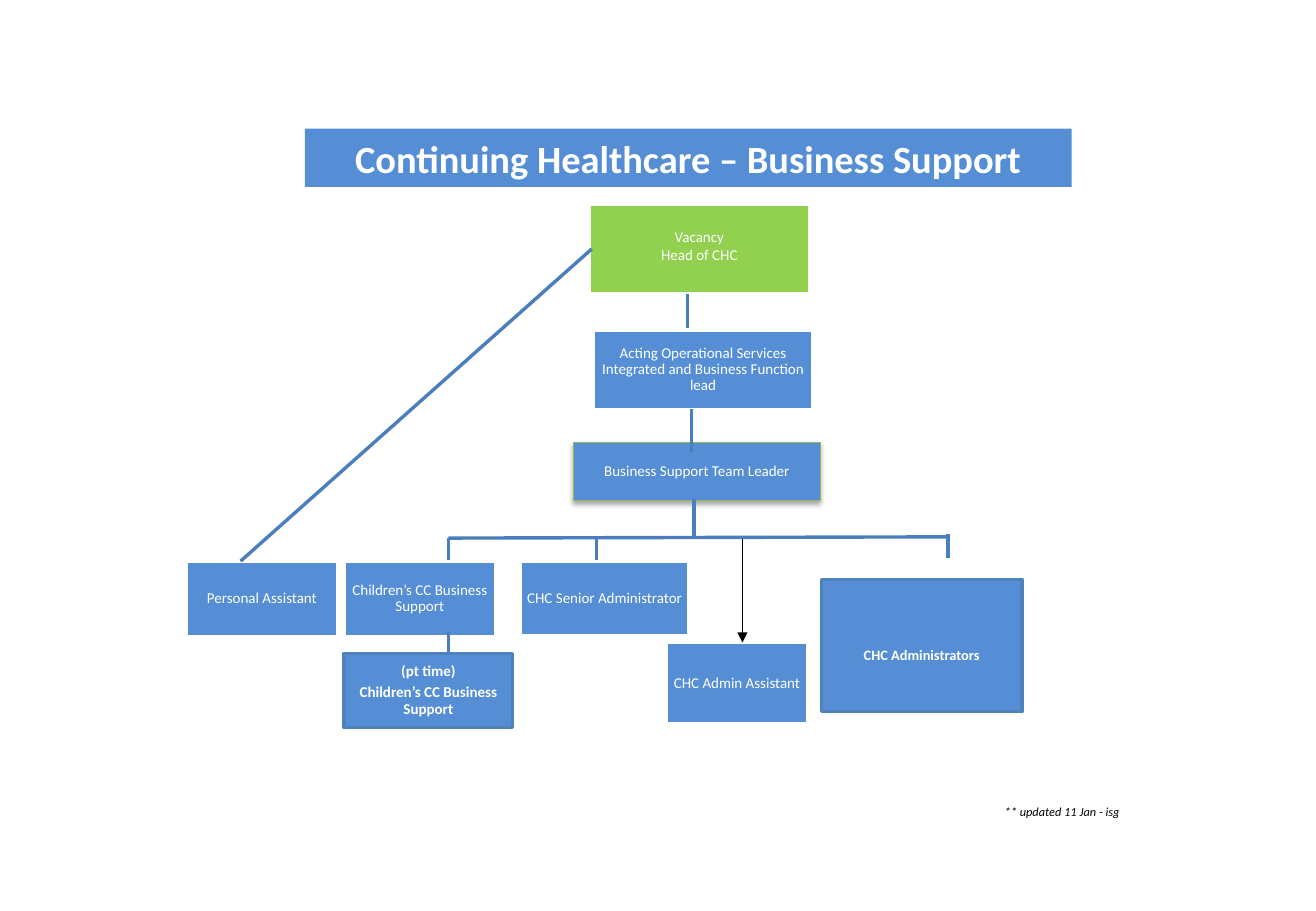
from lxml import etree
from pptx import Presentation
from pptx.dml.color import RGBColor
from pptx.enum.shapes import MSO_CONNECTOR, MSO_SHAPE
from pptx.enum.text import MSO_ANCHOR, PP_ALIGN
from pptx.oxml import parse_xml
from pptx.oxml.ns import nsdecls, qn
from pptx.util import Inches, Pt

BLUE, GREEN, WHITE, BLACK = "558ED5", "92D050", "FFFFFF", "000000"
EDGE, LINK, OLIVE = "4F81BD", "4B7EBC", "98B955"


def colour(value):
    return RGBColor.from_string(value)


def style(paragraph, size, value, bold=False, italic=False):
    font = paragraph.font
    font.name, font.size = "Calibri", Pt(size)
    font.bold, font.italic = bold, italic
    font.color.rgb = colour(value)


prs = Presentation()
prs.slide_width, prs.slide_height = Inches(10.83), Inches(7.5)
slide = prs.slides.add_slide(prs.slide_layouts[6])
shapes = slide.shapes

# Title banner
banner = shapes.add_shape(MSO_SHAPE.RECTANGLE, Inches(2.51), Inches(1.06), Inches(6.31), Inches(0.48))
banner.shadow.inherit = False
banner.fill.solid()
banner.fill.fore_color.rgb = colour(BLUE)
banner.line.fill.background()
heading = banner.text_frame.paragraphs[0]
heading.text = "Continuing Healthcare – Business Support"
heading.alignment = PP_ALIGN.CENTER
style(heading, 22.8, WHITE, bold=True)

# Roles: lines of text, left, top, width, height, fill, outline, outline width,
# text size, bold, line spacing, top inset, bottom inset
plain = (BLUE, WHITE, 2, 8.9, False, 0.9, 0.01, 0.01)
roles = [
    (["Acting Operational Services Integrated and Business Function lead"], 4.88, 2.72, 1.81, 0.65, *plain),
    (["Business Support Team Leader"], 4.72, 3.64, 2.03, 0.48, BLUE, OLIVE, 0.75, 8.9, False, 0.9, 0.01, 0.01),
    (["CHC Senior Administrator"], 4.28, 4.62, 1.39, 0.61, *plain),
    (["CHC Admin Assistant"], 5.48, 5.29, 1.17, 0.67, *plain),
    (["CHC Administrators"], 6.76, 4.77, 1.65, 1.09, BLUE, EDGE, 2, 8.5, True, 0.9, 0.18, 0.01),
    (["Children’s CC Business Support"], 2.83, 4.62, 1.25, 0.62, *plain),
    (["Vacancy", "Head of CHC"], 4.85, 1.68, 1.81, 0.74, GREEN, WHITE, 2, 8.9, False, 1.0, 0.01, 0.06),
    (["Personal Assistant"], 1.53, 4.62, 1.25, 0.62, *plain),
    (["(pt time)", "Children’s CC Business Support"], 2.83, 5.38, 1.39, 0.61,
     BLUE, EDGE, 2, 8.9, True, 0.9, 0.01, 0.01),
]
for (lines, left, top, width, height, fill, outline, weight,
     size, bold, spacing, inset_top, inset_bottom) in roles:
    role = shapes.add_shape(MSO_SHAPE.RECTANGLE, Inches(left), Inches(top), Inches(width), Inches(height))
    role.shadow.inherit = False
    role.fill.solid()
    role.fill.fore_color.rgb = colour(fill)
    role.line.color.rgb = colour(outline)
    role.line.width = Pt(weight)
    if outline == OLIVE:  # the team leader casts a shadow
        effects = role._element.spPr.find(qn("a:effectLst"))
        effects.append(parse_xml(
            f'<a:outerShdw {nsdecls("a")} blurRad="{Pt(3.1)}" dist="{Pt(1.8)}" dir="5400000">'
            f'<a:srgbClr val="{BLACK}"><a:alpha val="35000"/></a:srgbClr></a:outerShdw>'))
    frame = role.text_frame
    frame.word_wrap = True
    frame.vertical_anchor = MSO_ANCHOR.MIDDLE
    frame.margin_left = frame.margin_right = Inches(0.01)
    frame.margin_top, frame.margin_bottom = Inches(inset_top), Inches(inset_bottom)
    frame.text = "\n".join(lines)
    for number, paragraph in enumerate(frame.paragraphs):
        paragraph.alignment = PP_ALIGN.CENTER
        paragraph.line_spacing = spacing
        if number and spacing < 1:
            paragraph.space_before = Pt(3)
        style(paragraph, size, WHITE, bold)

# Reporting lines: start, end, colour, width
links = [(*ends, LINK, 2) for ends in [
    (7.8, 4.42, 3.69, 4.43),
    (4.87, 2.05, 1.98, 4.62),
    (4.91, 4.43, 4.91, 4.61),
    (3.69, 4.43, 3.69, 4.61),
    (7.8, 4.4, 7.8, 4.59),
    (5.66, 2.42, 5.66, 2.7),
    (5.69, 3.37, 5.69, 3.72),
    (5.71, 4.11, 5.71, 4.42),
    (3.69, 5.2, 3.69, 5.39),
]] + [(6.11, 4.44, 6.11, 5.29, BLACK, 0.75)]
for x1, y1, x2, y2, value, weight in links:
    link = shapes.add_connector(MSO_CONNECTOR.STRAIGHT, Inches(x1), Inches(y1), Inches(x2), Inches(y2))
    link.line.color.rgb = colour(value)
    link.line.width = Pt(weight)
    if value == BLACK:
        etree.SubElement(link.line._get_or_add_ln(), qn("a:tailEnd"), type="triangle")
    etree.SubElement(link._element.spPr, qn("a:effectLst"))

# Update note
note = shapes.add_textbox(Inches(8.17), Inches(6.57), Inches(1.16), Inches(0.22))
note.text_frame.word_wrap = False
update = note.text_frame.paragraphs[0]
update.text = "** updated 11 Jan - isg"
style(update, 7.3, BLACK, italic=True)

prs.save("out.pptx")
